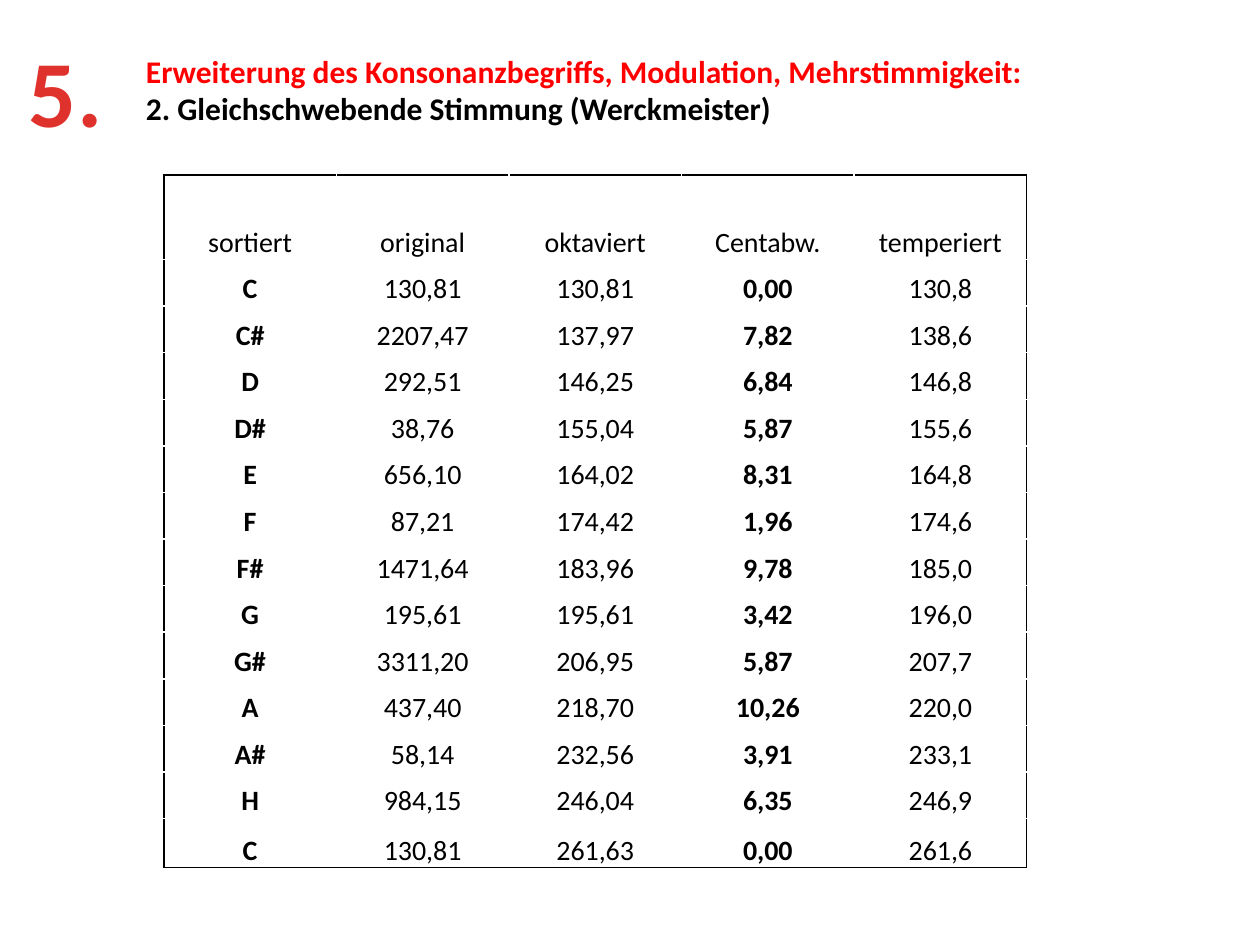
from lxml import etree
from pptx import Presentation
from pptx import util as u
from pptx.dml.color import RGBColor
from pptx.enum import shapes, text
from pptx.oxml.ns import qn

COLORS = {"white": "FFFFFF", "black": "000000", "red": "FF0000",
          "number_top": "E0322D", "number_bottom": "A2201C"}
FONT = "Calibri"

TITLE = [
    ("Erweiterung des Konsonanzbegriffs, Modulation, Mehrstimmigkeit:", "red"),
    ("2. Gleichschwebende Stimmung (Werckmeister)", "black"),
]
SECTION = "5."
HEADER = ("sortiert", "original", "oktaviert", "Centabw.", "temperiert")
TONES = [
    ("C", "130,81", "130,81", "0,00", "130,8"),
    ("C#", "2207,47", "137,97", "7,82", "138,6"),
    ("D", "292,51", "146,25", "6,84", "146,8"),
    ("D#", "38,76", "155,04", "5,87", "155,6"),
    ("E", "656,10", "164,02", "8,31", "164,8"),
    ("F", "87,21", "174,42", "1,96", "174,6"),
    ("F#", "1471,64", "183,96", "9,78", "185,0"),
    ("G", "195,61", "195,61", "3,42", "196,0"),
    ("G#", "3311,20", "206,95", "5,87", "207,7"),
    ("A", "437,40", "218,70", "10,26", "220,0"),
    ("A#", "58,14", "232,56", "3,91", "233,1"),
    ("H", "984,15", "246,04", "6,35", "246,9"),
    ("C", "130,81", "261,63", "0,00", "261,6"),
]
BOLD_COLUMNS = (0, 3)
HEADER_HEIGHT, ROW_HEIGHT, LAST_HEIGHT = 0.67, 0.37, 0.39

FRAME_FORMAT = {"word_wrap": False, "auto_size": text.MSO_AUTO_SIZE.SHAPE_TO_FIT_TEXT,
                "vertical_anchor": text.MSO_ANCHOR.TOP}
CELL_FORMAT = {"vertical_anchor": text.MSO_ANCHOR.BOTTOM, "margin_left": u.Inches(0.01),
               "margin_right": u.Inches(0.01), "margin_top": u.Inches(0.01),
               "margin_bottom": 0}


def color(name):
    return RGBColor.from_string(COLORS[name])


def apply(target, values):
    for name, value in values.items():
        setattr(target, name, value)


def inches(*lengths):
    return [u.Inches(length) for length in lengths]


def write(para, words, size, bold, ink="black", align=text.PP_ALIGN.CENTER):
    para.alignment = align
    span = para.add_run()
    span.text = words
    apply(span.font, {"name": FONT, "size": u.Pt(size), "bold": bold})
    span.font.color.rgb = color(ink)
    return span


def add_title(page):
    box = page.shapes.add_shape(shapes.MSO_SHAPE.RECTANGLE, *inches(1.06, 0.36, 7.22, 0.71))
    box.shadow.inherit = False
    box.fill.solid()
    box.fill.fore_color.rgb = color("white")
    box.line.fill.background()
    frame = box.text_frame
    apply(frame, FRAME_FORMAT)
    for index, (words, ink) in enumerate(TITLE):
        para = frame.add_paragraph() if index else frame.paragraphs[0]
        write(para, words, 18, True, ink, text.PP_ALIGN.LEFT)


def add_section(page):
    frame = page.shapes.add_textbox(*inches(0.12, 0.21, 0.8, 1.01)).text_frame
    apply(frame, FRAME_FORMAT)
    span = write(frame.paragraphs[0], SECTION, 54, True)
    fill = span.font.fill
    fill.gradient()
    fill.gradient_angle = 270
    stops = zip(fill.gradient_stops, ((0.25, "number_top"), (1, "number_bottom")))
    for stop, (position, ink) in stops:
        stop.position = position
        stop.color.rgb = color(ink)
    span._r.get_or_add_rPr().set("spc", "50")


def add_borders(cell, sides):
    properties = cell._tc.get_or_add_tcPr()
    for index, side in enumerate(sides):
        line = etree.Element(qn(f"a:ln{side}"), w=str(u.Pt(1)))
        fill = etree.SubElement(line, qn("a:solidFill"))
        etree.SubElement(fill, qn("a:srgbClr"), val=COLORS["black"])
        properties.insert(index, line)


def add_tone_table(page):
    rows = [HEADER, *TONES]
    heights = [HEADER_HEIGHT] + [ROW_HEIGHT] * (len(TONES) - 1) + [LAST_HEIGHT]
    last_row, last_column = len(rows) - 1, len(HEADER) - 1
    table = page.shapes.add_table(len(rows), len(HEADER),
                                  *inches(1.3, 1.39, 6.85, sum(heights))).table
    apply(table, {"first_row": False, "horz_banding": False})
    for row, height in zip(table.rows, heights):
        row.height = u.Inches(height)
    for r, values in enumerate(rows):
        for c, value in enumerate(values):
            cell = table.cell(r, c)
            apply(cell, CELL_FORMAT)
            cell.fill.background()
            write(cell.text_frame.paragraphs[0], value, 16, r > 0 and c in BOLD_COLUMNS)
            edges = {"L": c == 0, "R": c == last_column, "T": r == 0, "B": r == last_row}
            add_borders(cell, [side for side, outer in edges.items() if outer])


def main():
    deck = Presentation()
    deck.slide_width, deck.slide_height = inches(10, 7.5)
    page = deck.slides.add_slide(deck.slide_layouts[6])
    add_title(page)
    add_section(page)
    add_tone_table(page)
    deck.save("out.pptx")


if __name__ == "__main__":
    main()
